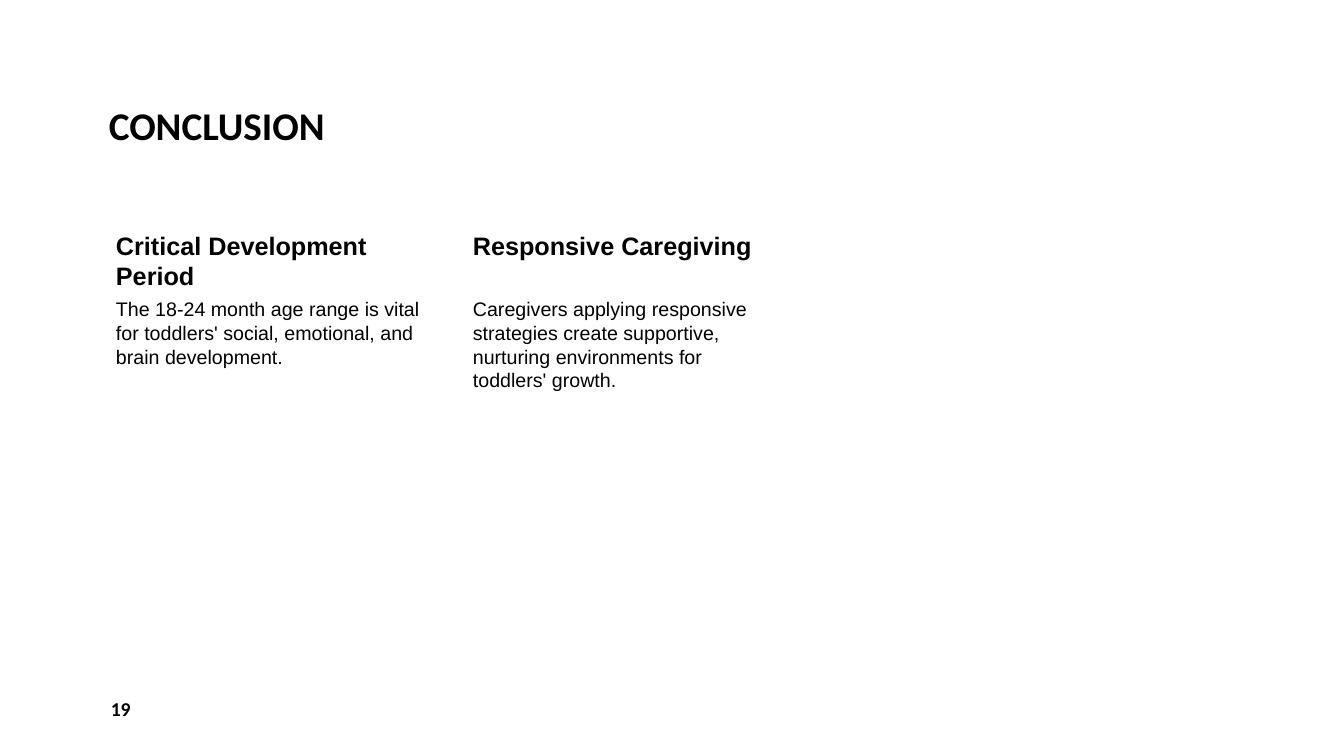
from pptx import Presentation
from pptx.dml.color import RGBColor
from pptx.enum.text import MSO_ANCHOR as Anchor, MSO_AUTO_SIZE as AutoSize, PP_ALIGN as Align
from pptx.util import Inches, Pt

INK = "000000"
PAPER = "FFFFFF"
COLUMNS_LEFT, COLUMNS_TOP = 1, 2.25
COLUMN_WIDTH, COLUMN_PITCH = 3.22, 3.54
HEADING_HEIGHT, BODY_HEIGHT = 0.68, 3.35

TAKEAWAYS = [
    ("Critical Development Period",
     "The 18-24 month age range is vital for toddlers' social, emotional, "
     "and brain development."),
    ("Responsive Caregiving",
     "Caregivers applying responsive strategies create supportive, "
     "nurturing environments for toddlers' growth."),
]


def color(hex_code):
    return RGBColor.from_string(hex_code)


def write(shape, words, size, font, bold=False, anchor=Anchor.TOP,
          insets=(0.1, 0.05, 0.1, 0.05), space_after=0, line_spacing=1.0):
    frame = shape.text_frame
    frame.word_wrap = True
    frame.auto_size = AutoSize.NONE
    frame.vertical_anchor = anchor
    (frame.margin_left, frame.margin_top,
     frame.margin_right, frame.margin_bottom) = map(Inches, insets)
    paragraph = frame.paragraphs[0]
    paragraph.alignment = Align.LEFT
    paragraph.space_before = Pt(0)
    paragraph.space_after = Pt(space_after)
    paragraph.line_spacing = line_spacing
    run = paragraph.add_run()
    run.text = words
    run.font.size = Pt(size)
    run.font.name = font
    run.font.bold = bold
    run.font.color.rgb = color(INK)


def add_title(slide, left, top, width, height):
    title = slide.shapes.title
    title.left, title.top = Inches(left), Inches(top)
    title.width, title.height = Inches(width), Inches(height)
    write(title, "CONCLUSION", 28, "Calibri", bold=True,
          anchor=Anchor.BOTTOM, line_spacing=0.9)


def add_takeaway(slide, left, top, width, heading_words, body_words):
    """Place a heading with its explanation directly below it."""
    column = slide.shapes.add_group_shape()
    heading = column.shapes.add_textbox(
        Inches(left), Inches(top), Inches(width), Inches(HEADING_HEIGHT))
    write(heading, heading_words, 18, "Arial", bold=True,
          insets=(0.15, 0.03, 0.03, 0.03))
    body = column.shapes.add_textbox(
        Inches(left), Inches(top + HEADING_HEIGHT),
        Inches(width), Inches(BODY_HEIGHT))
    write(body, body_words, 14, "Arial", insets=(0.15, 0.02, 0.02, 0.02))


def add_page_number(slide, left, top, width, height):
    number = slide.shapes.add_textbox(
        Inches(left), Inches(top), Inches(width), Inches(height))
    write(number, "19", 14, "Calibri", bold=True,
          anchor=Anchor.MIDDLE, space_after=6)


def add_conclusion(deck):
    slide = deck.slides.add_slide(deck.slide_layouts[5])
    slide.background.fill.solid()
    slide.background.fill.fore_color.rgb = color(PAPER)
    add_title(slide, 0.98, 0.08, 11.38, 1.45)
    for index, (heading, body) in enumerate(TAKEAWAYS):
        add_takeaway(slide, COLUMNS_LEFT + index * COLUMN_PITCH, COLUMNS_TOP,
                     COLUMN_WIDTH, heading, body)
    add_page_number(slide, COLUMNS_LEFT, 6.83, 2.92, 0.4)


def main():
    deck = Presentation()
    deck.slide_width, deck.slide_height = Inches(13.33), Inches(7.5)
    add_conclusion(deck)
    deck.save("out.pptx")


if __name__ == "__main__":
    main()
